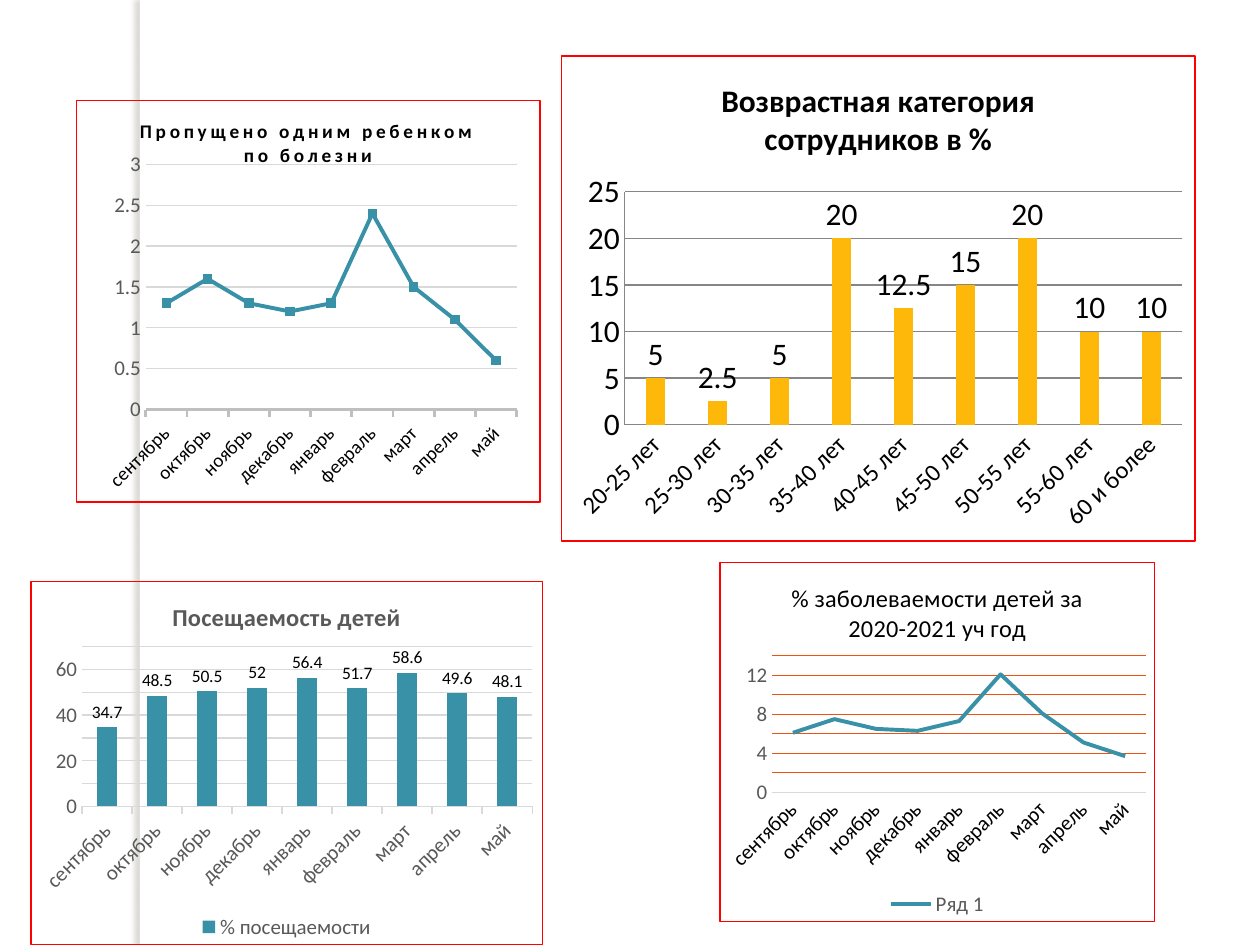
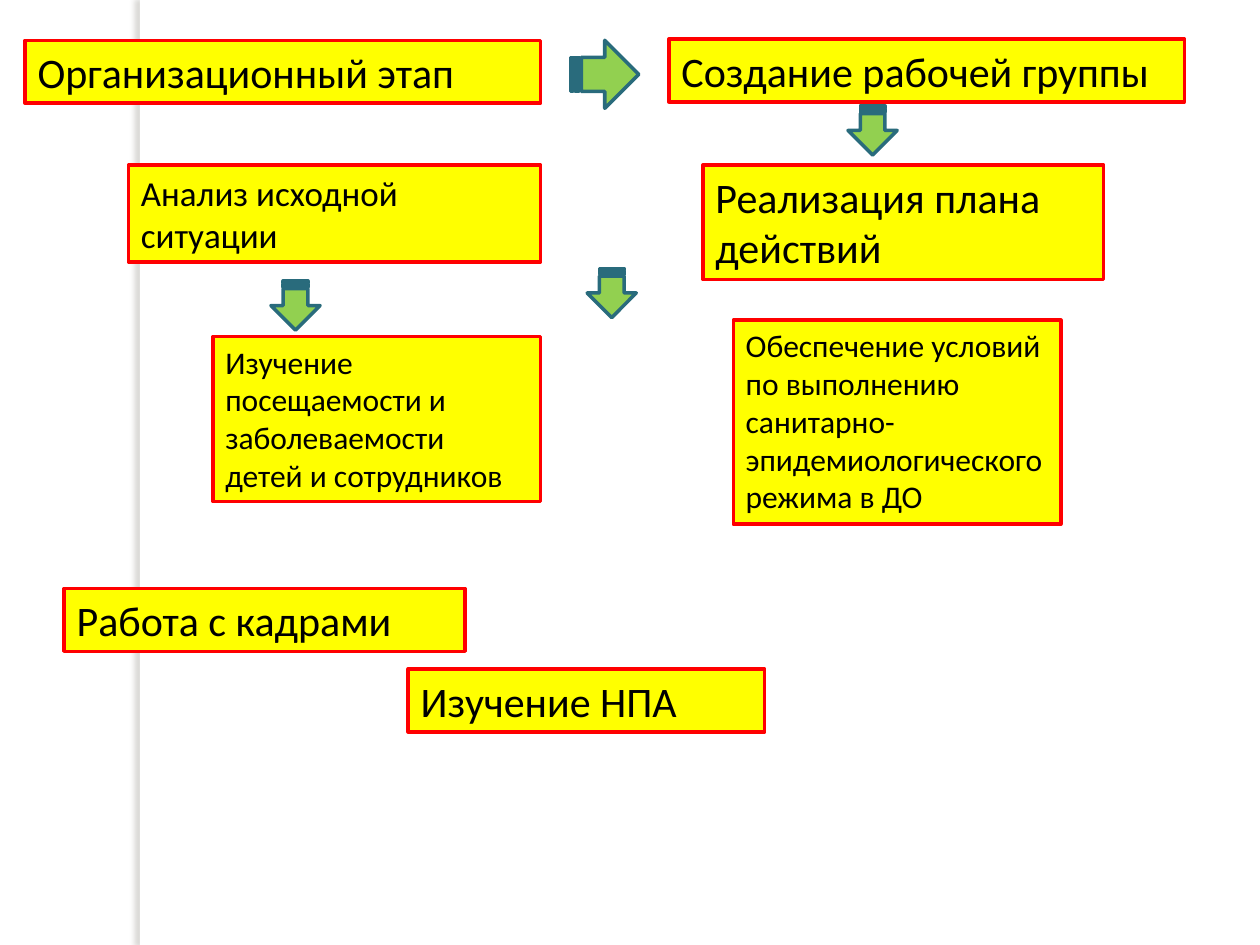
from lxml import etree
from pptx import Presentation
from pptx.chart.data import CategoryChartData
from pptx.dml.color import RGBColor
from pptx.enum.chart import (XL_CHART_TYPE, XL_LABEL_POSITION, XL_LEGEND_POSITION,
                             XL_MARKER_STYLE, XL_TICK_MARK)
from pptx.enum.shapes import MSO_SHAPE
from pptx.enum.text import MSO_ANCHOR, MSO_AUTO_SIZE, PP_ALIGN
from pptx.oxml import parse_xml
from pptx.oxml.ns import nsdecls, qn
from pptx.util import Inches, Pt

WHITE = RGBColor(0xFF, 0xFF, 0xFF)
BLACK = RGBColor(0x00, 0x00, 0x00)
RED = RGBColor(0xFF, 0x00, 0x00)
YELLOW = RGBColor(0xFF, 0xFF, 0x00)
GREEN = RGBColor(0x92, 0xD0, 0x50)
TEAL = RGBColor(0x38, 0x91, 0xA7)
DARK_TEAL = RGBColor(0x29, 0x6B, 0x7C)
AMBER = RGBColor(0xFE, 0xB8, 0x0A)
ORANGE = RGBColor(0xEE, 0x51, 0x12)
BAND_SHADOW = RGBColor(0x73, 0x6F, 0x63)
GRAY = RGBColor(0x59, 0x59, 0x59)
MID_GRAY = RGBColor(0x86, 0x86, 0x86)
AXIS_GRAY = RGBColor(0xBF, 0xBF, 0xBF)
PALE_GRAY = RGBColor(0xD9, 0xD9, 0xD9)

RECT = MSO_SHAPE.RECTANGLE
ARROW = MSO_SHAPE.STRIPED_RIGHT_ARROW
COLUMNS = XL_CHART_TYPE.COLUMN_CLUSTERED
LINE = XL_CHART_TYPE.LINE
MARKED_LINE = XL_CHART_TYPE.LINE_MARKERS_STACKED
TICK_NONE = XL_TICK_MARK.NONE
TICK_OUT = XL_TICK_MARK.OUTSIDE
OUTSIDE_END = XL_LABEL_POSITION.OUTSIDE_END
BOTTOM = XL_LEGEND_POSITION.BOTTOM
SQUARE = XL_MARKER_STYLE.SQUARE
TOP = MSO_ANCHOR.TOP
GROW = MSO_AUTO_SIZE.SHAPE_TO_FIT_TEXT
LEFT = PP_ALIGN.LEFT

FONT = "Calibri"
GRID_COLS, GRID_ROWS = 100, 75
MONTHS = ["сентябрь", "октябрь", "ноябрь", "декабрь", "январь",
          "февраль", "март", "апрель", "май"]
AGES = ["20-25 лет", "25-30 лет", "30-35 лет", "35-40 лет", "40-45 лет",
        "45-50 лет", "50-55 лет", "55-60 лет", "60 и более"]


class Deck:
    def __init__(self):
        self.prs = Presentation()
        self.prs.slide_width, self.prs.slide_height = Inches(10), Inches(7.5)
        self.s = None

    def slide(self):
        self.s = self.prs.slides.add_slide(self.prs.slide_layouts[6])
        band = self.shape(RECT, (11.1, 0, 0.8, GRID_ROWS), WHITE)
        band._element.spPr.append(parse_xml(
            f'<a:effectLst {nsdecls("a")}><a:outerShdw blurRad="{Pt(3)}" dist="{Pt(3)}" '
            f'dir="10800000" rotWithShape="0"><a:srgbClr val="{BAND_SHADOW}">'
            '<a:alpha val="25000"/></a:srgbClr></a:outerShdw></a:effectLst>'))

    def place(self, cells):
        col = self.prs.slide_width / GRID_COLS
        row = self.prs.slide_height / GRID_ROWS
        return [round(n * unit) for n, unit in zip(cells, (col, row, col, row))]

    def font(self, font, size, color, bold=False):
        font.name, font.size, font.bold = FONT, Pt(size), bold
        font.color.rgb = color

    def stroke(self, line, color, width):
        if color is None:
            line.fill.background()
        else:
            line.color.rgb = color
            line.width = Pt(width)

    def shape(self, kind, cells, fill, line=None):
        sp = self.s.shapes.add_shape(kind, *self.place(cells))
        if kind != RECT or line is not None:
            sp.shadow.inherit = False
        sp.fill.solid()
        sp.fill.fore_color.rgb = fill
        self.stroke(sp.line, line, 2)
        return sp

    def box(self, text, cells, size):
        tf = self.shape(RECT, cells, YELLOW, RED).text_frame
        tf.text = text
        tf.word_wrap, tf.auto_size, tf.vertical_anchor = True, GROW, TOP
        p = tf.paragraphs[0]
        p.alignment = LEFT
        self.font(p.runs[0].font, size, BLACK)

    def arrow(self, col, row, size, turn=90):
        self.shape(ARROW, (col, row, size, size), GREEN, DARK_TEAL).rotation = turn

    def chart(self, kind, cells, plot, title, cats, name, values, size=10):
        data = CategoryChartData()
        data.categories = cats
        data.add_series(name, values)
        chart = self.s.shapes.add_chart(kind, *self.place(cells), data).chart
        self.font(chart.font, size, BLACK)
        chart.has_legend = False
        chart._chartSpace.find(qn("c:txPr")).addprevious(parse_xml(
            f'<c:spPr {nsdecls("c", "a")}><a:noFill/><a:ln w="{Pt(0.75)}"><a:solidFill>'
            f'<a:srgbClr val="{RED}"/></a:solidFill></a:ln></c:spPr>'))
        self.plot_area(chart, plot)
        self.title(chart, *title)
        chart.plots[0].vary_by_categories = False
        return chart

    def plot_area(self, chart, shares):
        area = chart._chartSpace.chart.plotArea
        for old in area.findall(qn("c:layout")):
            area.remove(old)
        layout = etree.Element(qn("c:layout"))
        manual = etree.SubElement(layout, qn("c:manualLayout"))
        settings = [("layoutTarget", "inner"), ("xMode", "edge"), ("yMode", "edge"),
                    *zip("xywh", shares)]
        for tag, value in settings:
            etree.SubElement(manual, qn(f"c:{tag}")).set("val", str(value))
        area.insert(0, layout)

    def title(self, chart, text, size, color=BLACK, bold=True, spacing=0):
        tf = chart.chart_title.text_frame
        tf.text = text
        r = tf.paragraphs[0].runs[0]
        self.font(r.font, size, color, bold)
        r._r.get_or_add_rPr().set("spc", str(spacing))

    def cat_axis(self, chart, size, color, line, width=0.75, tick=TICK_NONE):
        axis = chart.category_axis
        axis.major_tick_mark = tick
        self.font(axis.tick_labels.font, size, color)
        self.stroke(axis.format.line, line, width)
        axis._element.find(qn("c:txPr")).find(qn("a:bodyPr")).set("rot", "-2700000")

    def val_axis(self, chart, top, step, grid=PALE_GRAY, size=12, color=GRAY, line=None):
        axis = chart.value_axis
        axis.minimum_scale, axis.maximum_scale, axis.major_unit = 0, top, step
        axis.major_tick_mark = TICK_NONE
        self.font(axis.tick_labels.font, size, color)
        self.stroke(axis.format.line, line, 0.75)
        self.stroke(axis.major_gridlines.format.line, grid, 0.75)

    def columns(self, chart, color, size, gap, overlap=0):
        plot = chart.plots[0]
        plot.gap_width, plot.overlap = gap, overlap
        fill = plot.series[0].format.fill
        fill.solid()
        fill.fore_color.rgb = color
        plot.has_data_labels = True
        labels = plot.data_labels
        labels.show_value, labels.position = True, OUTSIDE_END
        self.font(labels.font, size, BLACK)

    def line(self, chart, width):
        ser = chart.plots[0].series[0]
        ser.smooth = False
        self.stroke(ser.format.line, TEAL, width)
        return ser

    def markers(self, ser, size):
        ser.marker.style, ser.marker.size = SQUARE, size
        ser.marker.format.fill.solid()
        ser.marker.format.fill.fore_color.rgb = TEAL
        self.stroke(ser.marker.format.line, TEAL, 0.75)

    def legend(self, chart):
        chart.has_legend = True
        chart.legend.position = BOTTOM
        chart.legend.include_in_layout = False
        self.font(chart.legend.font, 12, GRAY)


def statistics(deck):
    deck.slide()

    missed = deck.chart(MARKED_LINE, (6, 7.9, 36.9, 32), (0.15, 0.16, 0.8, 0.61),
                        ("Пропущено одним ребенком по болезни", 11, BLACK, True, 200),
                        MONTHS, "Series 1", (1.3, 1.6, 1.3, 1.2, 1.3, 2.4, 1.5, 1.1, 0.6))
    deck.cat_axis(missed, 11, BLACK, AXIS_GRAY, 1.5, TICK_OUT)
    deck.val_axis(missed, 3, 0.5)
    deck.markers(deck.line(missed, 2.25), 5)

    staff = deck.chart(COLUMNS, (44.5, 4.4, 50.4, 38.6), (0.1, 0.28, 0.88, 0.48),
                       ("Возврастная категория сотрудников в %", 18),
                       AGES, "Series 1", (5, 2.5, 5, 20, 12.5, 15, 20, 10, 10), 18)
    deck.cat_axis(staff, 14, BLACK, MID_GRAY)
    deck.val_axis(staff, 25, 5, MID_GRAY, 18, BLACK, MID_GRAY)
    deck.columns(staff, AMBER, 18, 219, -27)

    attendance = deck.chart(COLUMNS, (2.4, 46.1, 40.7, 28.9), (0.1, 0.18, 0.88, 0.44),
                            ("Посещаемость детей", 14, GRAY), MONTHS, "% посещаемости",
                            (34.7, 48.5, 50.5, 52, 56.4, 51.7, 58.6, 49.6, 48.1))
    deck.cat_axis(attendance, 12, GRAY, PALE_GRAY, tick=TICK_OUT)
    deck.val_axis(attendance, 70, 10)
    deck.columns(attendance, TEAL, 10, 150)
    deck.legend(attendance)

    illness = deck.chart(LINE, (57.1, 44.6, 34.6, 28.6), (0.12, 0.26, 0.86, 0.38),
                         ("% заболеваемости детей за 2020-2021 уч год", 14, BLACK, False),
                         MONTHS, "Ряд 1", (6.1, 7.5, 6.5, 6.3, 7.3, 12.1, 8.1, 5.1, 3.7))
    deck.cat_axis(illness, 12, BLACK, PALE_GRAY)
    deck.val_axis(illness, 14, 2, ORANGE)
    deck.line(illness, 2.25)
    deck.legend(illness)


def stages(deck):
    deck.slide()
    for text, cells, size in (
            ("Организационный этап", (2, 3.2, 40.9, 5), 24),
            ("Создание рабочей группы", (53.1, 3.1, 40.9, 5), 24),
            ("Анализ исходной ситуации", (10.2, 13.1, 32.7, 7.7), 20),
            ("Реализация плана действий", (55.8, 13.1, 31.8, 9.1), 24),
            ("Изучение посещаемости и заболеваемости детей и сотрудников",
             (16.9, 26.7, 26, 13.1), 18),
            ("Обеспечение условий по выполнению санитарно-эпидемиологического режима в ДО",
             (58.2, 25.4, 26, 16.2), 18),
            ("Работа с кадрами", (5.1, 46.7, 31.8, 5), 24),
            ("Изучение НПА", (32.4, 53.1, 28.3, 5), 24)):
        deck.box(text, cells, size)
    deck.arrow(45.3, 3.2, 5.4, 0)
    for col, row in ((67.3, 8.4), (21.5, 22.3), (46.6, 21.3)):
        deck.arrow(col, row, 3.9)


def main():
    deck = Deck()
    statistics(deck)
    stages(deck)
    deck.prs.save("out.pptx")


if __name__ == "__main__":
    main()
